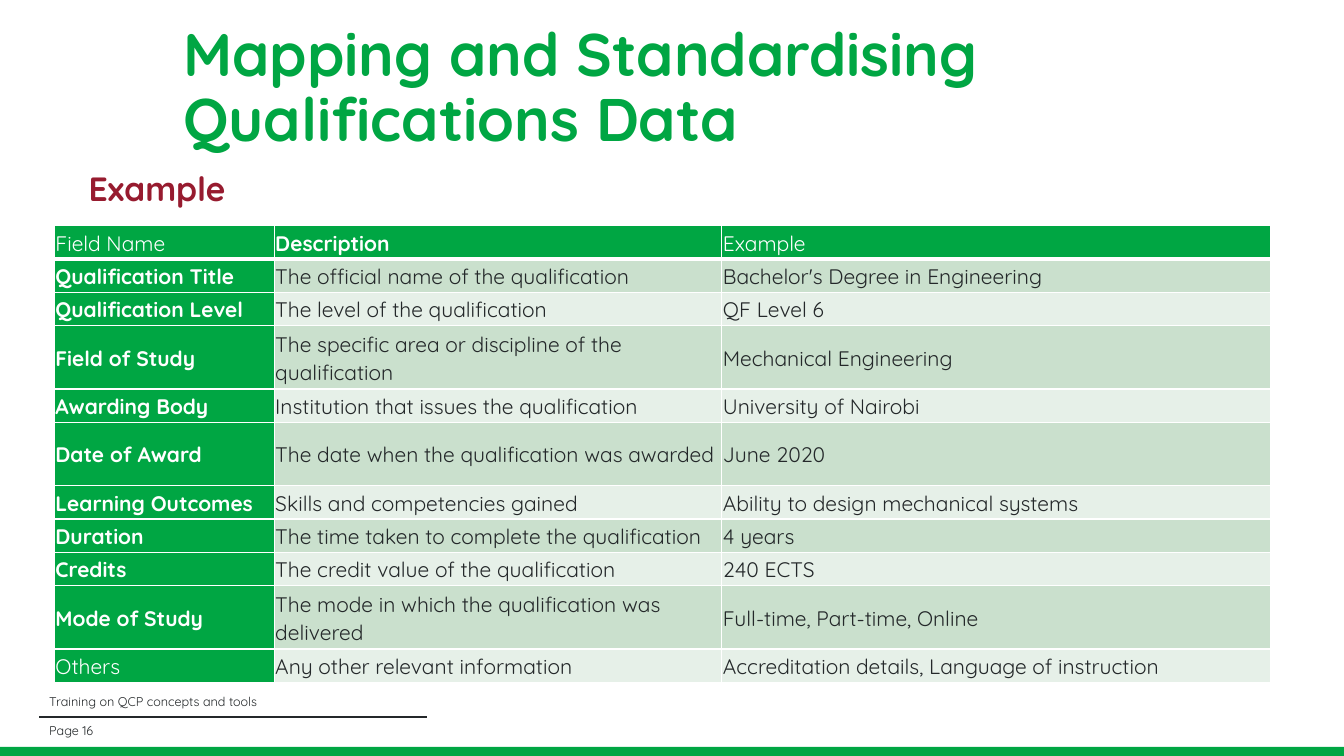
import pptx
import pptx.util
import pptx.dml.color
import pptx.enum.shapes
import pptx.enum.text
import pptx.oxml.ns
import lxml.etree

RGBColor = pptx.dml.color.RGBColor
GREEN = RGBColor(0x00, 0xA6, 0x43)
DARK = RGBColor(0x24, 0x28, 0x2A)
MAROON = RGBColor(0x97, 0x1B, 0x2F)
WHITE = RGBColor(0xFF, 0xFF, 0xFF)
BANDS = [RGBColor(0xCA, 0xE0, 0xCD), RGBColor(0xE6, 0xF0, 0xE8)]

GRID_COLS, GRID_ROWS = 1333, 750
UNIT = pptx.util.Inches(0.01)
FONT = "Quicksand"
ANCHOR = pptx.enum.text.MSO_ANCHOR
LEFT = pptx.enum.text.PP_ALIGN.LEFT

COLUMNS = [218, 444, 544]
ROW, TALL_ROW = 33, 63
TALL_FIELDS = {"Field of Study", "Date of Award", "Mode of Study"}
LIGHT_LABELS = {"Field Name", "Example", "Others"}
FIELDS = [
    ("Field Name", "Description", "Example"),
    ("Qualification Title", "The official name of the qualification", "Bachelor's Degree in Engineering"),
    ("Qualification Level", "The level of the qualification", "QF Level 6"),
    ("Field of Study", "The specific area or discipline of the qualification", "Mechanical Engineering"),
    ("Awarding Body", "Institution that issues the qualification", "University of Nairobi"),
    ("Date of Award", "The date when the qualification was awarded", "June 2020"),
    ("Learning Outcomes", "Skills and competencies gained", "Ability to design mechanical systems"),
    ("Duration", "The time taken to complete the qualification", "4 years"),
    ("Credits", "The credit value of the qualification", "240 ECTS"),
    ("Mode of Study", "The mode in which the qualification was delivered", "Full-time, Part-time, Online"),
    ("Others", "Any other relevant information", "Accreditation details, Language of instruction"),
]


def grid(*lengths):
    return [round(n * UNIT) for n in lengths]


def apply(target, values):
    for name, value in values.items():
        setattr(target, name, value)


def write(tf, text, size, color, bold=False, spacing=1.0):
    p = tf.paragraphs[0]
    apply(p, {"alignment": LEFT, "line_spacing": spacing, "space_before": pptx.util.Pt(0)})
    r = p.add_run()
    r.text = text
    apply(r.font, {"name": FONT, "size": pptx.util.Pt(size), "bold": bold})
    r.font.color.rgb = color


def fill_frame(sp, box, anchor, *text_format):
    apply(sp, dict(zip(("left", "top", "width", "height"), grid(*box))))
    apply(sp.text_frame, {
        "word_wrap": True,
        "auto_size": pptx.enum.text.MSO_AUTO_SIZE.NONE,
        "vertical_anchor": anchor,
    })
    write(sp.text_frame, *text_format)


def add_heading(s, box):
    x, y, w, h = box
    fill_frame(s.shapes.title, (x + 94, y, w - 83, h - 47), ANCHOR.MIDDLE,
               "Mapping and Standardising Qualifications Data", 42.9, GREEN, True, 0.9)
    body = s.placeholders[1]
    pPr = body.text_frame.paragraphs[0]._p.get_or_add_pPr()
    pPr.set("marL", "0")
    pPr.set("indent", "0")
    lxml.etree.SubElement(pPr, pptx.oxml.ns.qn("a:buNone"))
    fill_frame(body, (x, y + h - 47, w, 47), ANCHOR.TOP, "Example", 24, MAROON, True, 0.9)


def set_borders(cell, widths):
    qn = pptx.oxml.ns.qn
    tcPr = cell._tc.get_or_add_tcPr()
    for side, width in widths.items():
        ln = lxml.etree.SubElement(tcPr, qn("a:ln" + side), w=str(pptx.util.Pt(width)))
        solid = lxml.etree.SubElement(ln, qn("a:solidFill"))
        lxml.etree.SubElement(solid, qn("a:srgbClr"), val=str(WHITE))


def add_fields_table(s, box):
    heights = [TALL_ROW if row[0] in TALL_FIELDS else ROW for row in FIELDS]
    table = s.shapes.add_table(len(FIELDS), len(COLUMNS), *grid(*box)).table
    for column, width in zip(table.columns, grid(*COLUMNS)):
        column.width = width
    for row, height in zip(table.rows, grid(*heights)):
        row.height = height
    margin = grid(1)[0]
    for i, texts in enumerate(FIELDS):
        for j, text in enumerate(texts):
            cell = table.cell(i, j)
            label = i == 0 or j == 0
            apply(cell, {"margin_left": margin, "margin_right": margin, "margin_top": margin,
                         "margin_bottom": margin, "vertical_anchor": ANCHOR.MIDDLE})
            set_borders(cell, {"L": 1, "R": 1, "T": 3 if i == 1 else 1, "B": 3 if i == 0 else 1})
            cell.fill.solid()
            cell.fill.fore_color.rgb = GREEN if label else BANDS[(i - 1) % 2]
            write(cell.text_frame, text, 15, WHITE if label else DARK,
                  label and text not in LIGHT_LABELS, 1.07)


def add_footer(s, box):
    x, y, w, h = box
    bar = s.shapes.add_shape(pptx.enum.shapes.MSO_SHAPE.RECTANGLE,
                             *grid(-3, y + h - 13, GRID_COLS + 7, 13))
    bar.shadow.inherit = False
    bar.fill.solid()
    bar.fill.fore_color.rgb = GREEN
    bar.line.fill.background()
    rule = s.shapes.add_connector(pptx.enum.shapes.MSO_CONNECTOR.STRAIGHT,
                                  *grid(x, y + 25, x + 385, y + 25))
    rule.line.color.rgb = DARK
    rule.line.width = pptx.util.Pt(1.5)
    lxml.etree.SubElement(rule._element.spPr, pptx.oxml.ns.qn("a:effectLst"))
    for offset, text in ((0, "Training on QCP concepts and tools"), (29, "Page 16")):
        place = (x, y + offset, w, 19)
        fill_frame(s.shapes.add_textbox(*grid(*place)), place, ANCHOR.MIDDLE, text, 9, DARK)


def main():
    prs = pptx.Presentation()
    prs.slide_width, prs.slide_height = grid(GRID_COLS, GRID_ROWS)
    s = prs.slides.add_slide(prs.slide_layouts[1])
    add_heading(s, (78, 11, 1207, 202))
    add_fields_table(s, (54, 224, sum(COLUMNS), 453))
    add_footer(s, (39, 686, 406, 68))
    prs.save("out.pptx")


if __name__ == "__main__":
    main()
